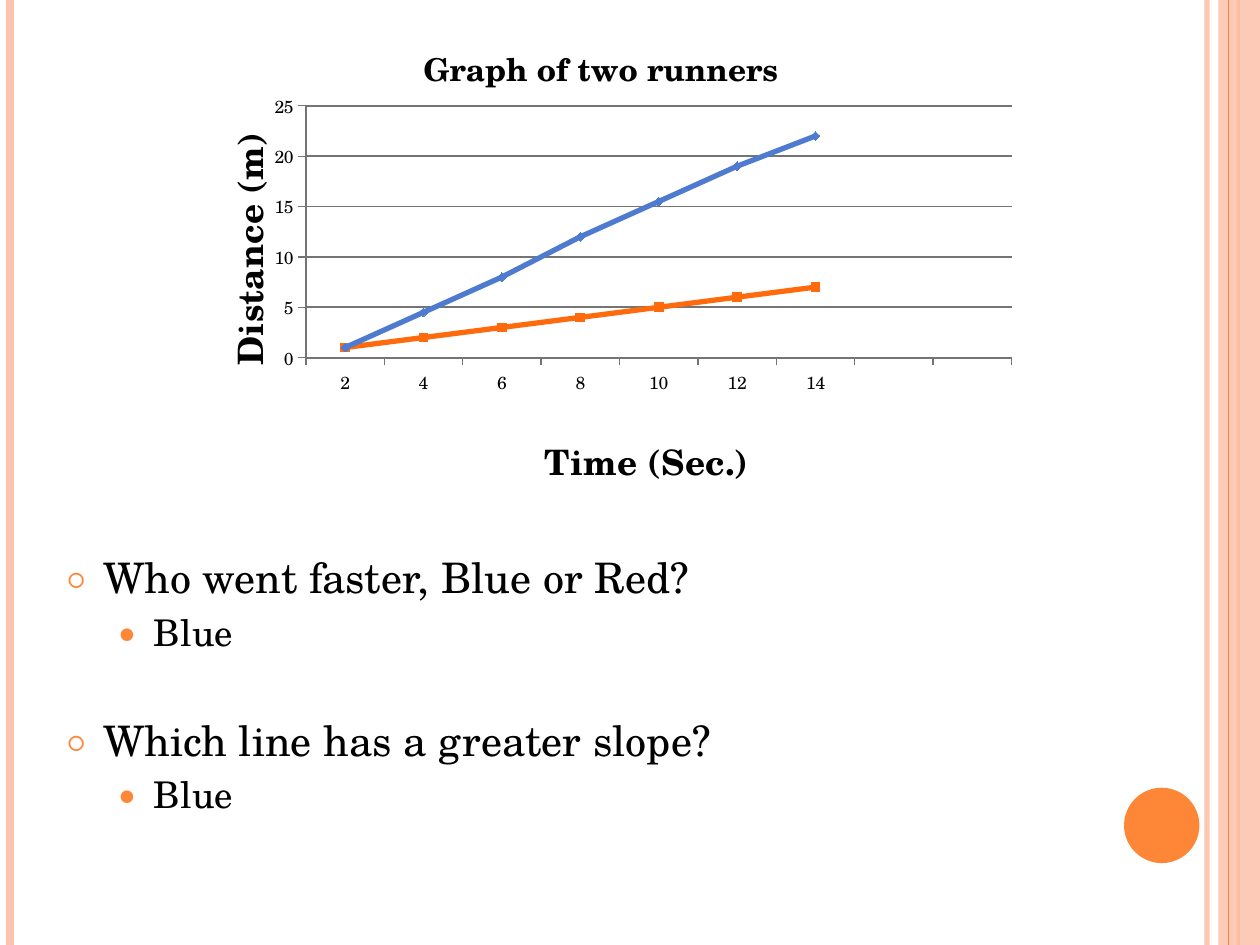
from dataclasses import dataclass

from lxml import etree
from pptx import Presentation
from pptx.chart.data import CategoryChartData
from pptx.dml.color import RGBColor
from pptx.enum.chart import XL_CHART_TYPE, XL_TICK_MARK
from pptx.enum.shapes import MSO_CONNECTOR, MSO_SHAPE
from pptx.enum.text import MSO_ANCHOR, MSO_AUTO_SIZE
from pptx.oxml.ns import qn
from pptx.util import Cm, Pt

LINE_CHART = XL_CHART_TYPE.LINE
TICK_OUT, TICK_NONE = XL_TICK_MARK.OUTSIDE, XL_TICK_MARK.NONE
STRAIGHT = MSO_CONNECTOR.STRAIGHT
RECTANGLE, OVAL = MSO_SHAPE.RECTANGLE, MSO_SHAPE.OVAL
TOP, NO_AUTOFIT = MSO_ANCHOR.TOP, MSO_AUTO_SIZE.NONE


@dataclass(frozen=True)
class Theme:
    font: str = "TeX Gyre Schola"
    text: str = "000000"
    accent: str = "FE8637"
    pale: str = "FEC3AE"
    grid: str = "747474"
    red_runner: str = "FF6A0D"
    blue_runner: str = "4E7BCF"
    question_size: int = 24
    answer_size: int = 21
    chart_title_size: int = 18
    axis_title_size: int = 20
    label_size: int = 10


THEME = Theme()
PAGE_WIDTH, PAGE_HEIGHT = Cm(25.4), Cm(19.05)
TIMES = ["2", "4", "6", "8", "10", "12", "14", "", ""]
RUNNERS = [
    ("Series 1", THEME.red_runner, [1, 2, 3, 4, 5, 6, 7, None, None]),
    ("Series 2", THEME.blue_runner, [1, 4.5, 8, 12, 15.5, 19, 22, None, None]),
]
QUESTIONS = [
    ("Who went faster, Blue or Red?", "Blue"),
    ("Which line has a greater slope?", "Blue"),
]


def rgb(color):
    return RGBColor.from_string(color)


def style_font(font, size, bold=False):
    font.name = THEME.font
    font.size = Pt(size)
    font.bold = bold
    font.color.rgb = rgb(THEME.text)


def style_line(line, color, width):
    line.color.rgb = rgb(color)
    line.width = Pt(width)


def set_opacity(element, percent):
    """Make the first solid colour inside the element translucent."""
    color = next(element.iter(qn("a:srgbClr")))
    etree.SubElement(color, qn("a:alpha"), val=str(percent * 1000))


def add_stripe(page, x, color, width, opacity=100):
    stripe = page.shapes.add_connector(STRAIGHT, Cm(x), 0, Cm(x), PAGE_HEIGHT)
    style_line(stripe.line, color, width)
    properties = stripe._element.spPr
    if opacity < 100:
        set_opacity(properties, opacity)
    etree.SubElement(properties, qn("a:effectLst"))


def add_block(page, kind, left, top, width, height, color):
    block = page.shapes.add_shape(kind, left, top, width, height)
    block.shadow.inherit = False
    block.fill.solid()
    block.fill.fore_color.rgb = rgb(color)
    block.line.fill.background()
    return block


def add_decoration(page):
    add_stripe(page, 24.33, THEME.pale, 3, opacity=93)
    add_stripe(page, 0.21, THEME.pale, 4.5)
    add_stripe(page, 24.97, THEME.accent, 1.5)
    band = add_block(page, RECTANGLE, Cm(24.56), 0, Cm(0.84), PAGE_HEIGHT, THEME.pale)
    set_opacity(band._element.spPr, 87)
    add_stripe(page, 24.76, THEME.accent, 0.75)
    add_block(page, OVAL, Cm(22.66), Cm(15.88), Cm(1.52), Cm(1.52), THEME.accent)


def set_bullet(para, symbol, percent, margin):
    properties = para._p.get_or_add_pPr()
    properties.set("marL", str(Cm(margin)))
    properties.set("indent", str(-Cm(0.76)))
    color = etree.SubElement(properties, qn("a:buClr"))
    etree.SubElement(color, qn("a:srgbClr"), val=THEME.accent)
    etree.SubElement(properties, qn("a:buSzPct"), val=str(percent * 1000))
    etree.SubElement(properties, qn("a:buFont"), typeface=THEME.font)
    etree.SubElement(properties, qn("a:buChar"), char=symbol)


def write_item(para, text, level, space_before):
    para.text = text
    para.level = level
    para.space_before = Pt(space_before)
    if level == 0:
        set_bullet(para, "○", 70, 0.76)
        size = THEME.question_size
    else:
        set_bullet(para, "●", 80, 1.78)
        size = THEME.answer_size
    style_font(para.runs[0].font, size)


def fill_questions(body):
    body.left, body.top, body.width, body.height = Cm(1.07), Cm(11), Cm(23.7), Cm(10.36)
    frame = body.text_frame
    frame.word_wrap = True
    frame.auto_size = NO_AUTOFIT
    frame.vertical_anchor = TOP
    for index, (question, answer) in enumerate(QUESTIONS):
        para = frame.add_paragraph() if index else frame.paragraphs[0]
        write_item(para, question, 0, 35 if index else 6)
        write_item(frame.add_paragraph(), answer, 1, 4)


def set_layout(parent, position, **values):
    """Place a chart part by fractions of the chart's size."""
    for old in parent.findall(qn("c:layout")):
        parent.remove(old)
    layout = etree.Element(qn("c:layout"))
    parent.insert(position, layout)
    manual = etree.SubElement(layout, qn("c:manualLayout"))
    if "w" in values:
        etree.SubElement(manual, qn("c:layoutTarget"), val="inner")
    for name in ("xMode", "yMode"):
        etree.SubElement(manual, qn("c:" + name), val="edge")
    for name, value in values.items():
        etree.SubElement(manual, qn("c:" + name), val=str(value))


def write_chart_title(title, text, size, x, y):
    title.text_frame.text = text
    style_font(title.text_frame.paragraphs[0].runs[0].font, size, bold=True)
    set_layout(title._element, 1, x=x, y=y)


def style_axis(axis, title, x, y):
    axis.major_tick_mark = TICK_OUT
    axis.minor_tick_mark = TICK_NONE
    style_line(axis.format.line, THEME.grid, 0.75)
    style_font(axis.tick_labels.font, THEME.label_size)
    write_chart_title(axis.axis_title, title, THEME.axis_title_size, x, y)


def add_runner_chart(page):
    data = CategoryChartData()
    data.categories = TIMES
    for name, _, distances in RUNNERS:
        data.add_series(name, distances)
    chart = page.shapes.add_chart(
        LINE_CHART, Cm(3.39), 0, Cm(17.35), Cm(10.16), data
    ).chart
    style_font(chart.font, THEME.label_size)
    chart.has_legend = False
    write_chart_title(
        chart.chart_title, "Graph of two runners", THEME.chart_title_size, 0.29, 0.07
    )
    style_axis(chart.category_axis, "Time (Sec.)", 0.43, 0.84)

    distance_axis = chart.value_axis
    style_axis(distance_axis, "Distance (m)", 0.05, 0.25)
    distance_axis.minimum_scale, distance_axis.maximum_scale = 0, 25
    distance_axis.major_unit = 5
    distance_axis.has_major_gridlines = True
    style_line(distance_axis.major_gridlines.format.line, THEME.grid, 1)
    rotation = next(distance_axis.axis_title._element.iter(qn("a:bodyPr")))
    rotation.set("rot", "-5400000")
    rotation.set("vert", "horz")

    plot = chart.plots[0]
    plot.vary_by_categories = False
    for series, (_, color, _) in zip(plot.series, RUNNERS):
        series.smooth = False
        series.marker.style = None
        style_line(series.format.line, color, 3)
    set_layout(chart._chartSpace.chart.plotArea, 0, x=0.16, y=0.21, w=0.82, h=0.5)


def main():
    deck = Presentation()
    deck.slide_width, deck.slide_height = PAGE_WIDTH, PAGE_HEIGHT
    page = deck.slides.add_slide(deck.slide_layouts[1])
    title = page.shapes.title._element
    title.getparent().remove(title)
    add_decoration(page)
    fill_questions(page.placeholders[1])
    add_runner_chart(page)
    deck.save("out.pptx")


if __name__ == "__main__":
    main()
